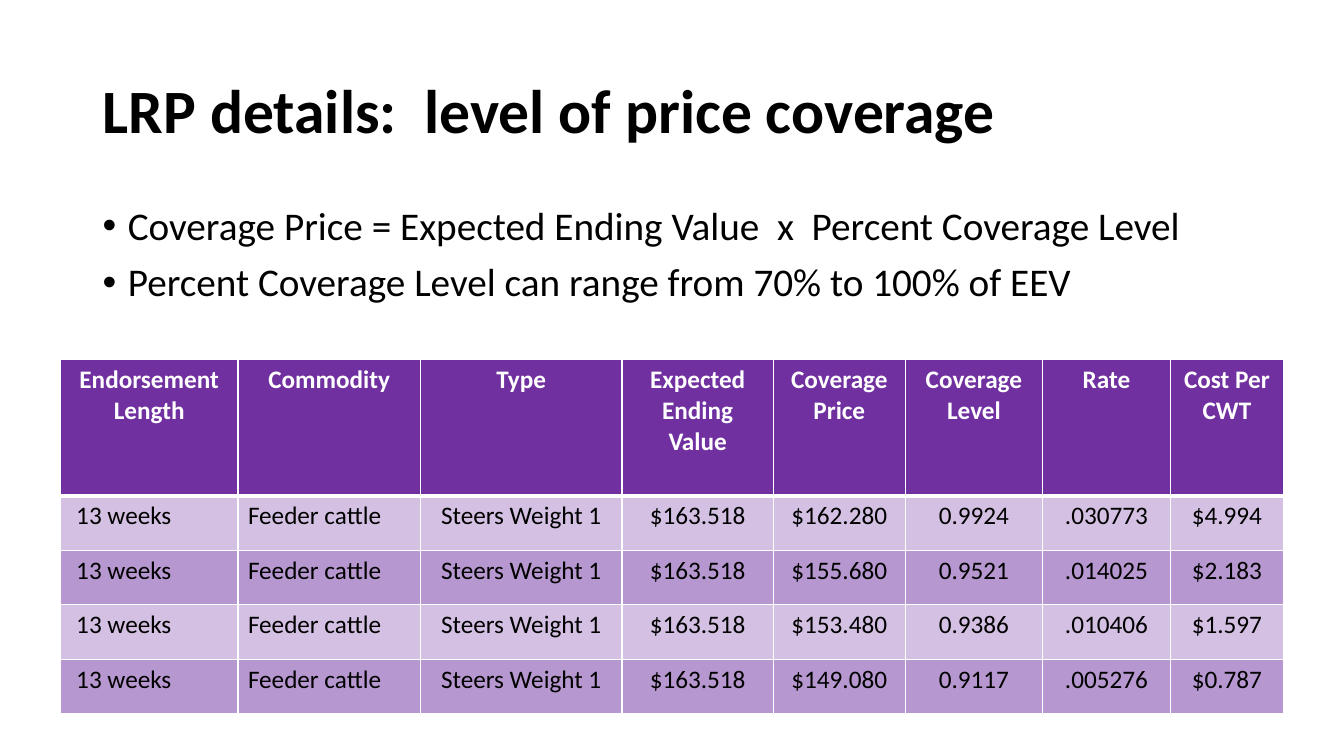
from lxml import etree
from pptx import Presentation
from pptx import util as u
from pptx.dml.color import RGBColor
from pptx.enum import text
from pptx.oxml import ns

FONT = "Calibri"
BLACK = RGBColor(0x00, 0x00, 0x00)
WHITE = RGBColor(0xFF, 0xFF, 0xFF)
PURPLE = RGBColor(0x70, 0x30, 0xA0)
W, H = 13.33, 7.5

BULLETS = [
    "Coverage Price = Expected Ending Value  x  Percent Coverage Level",
    "Percent Coverage Level can range from 70% to 100% of EEV",
]
HEADERS = ["Endorsement Length", "Commodity", "Type", "Expected Ending Value",
           "Coverage Price", "Coverage Level", "Rate", "Cost Per CWT"]
COMMON = [" 13 weeks", "Feeder cattle", "Steers Weight 1", "$163.518"]
QUOTES = [
    ["$162.280", "0.9924", ".030773", "$4.994"],
    ["$155.680", "0.9521", ".014025", "$2.183"],
    ["$153.480", "0.9386", ".010406", "$1.597"],
    ["$149.080", "0.9117", ".005276", "$0.787"],
]
COL_WIDTHS = [1.76, 1.81, 2, 1.5, 1.31, 1.36, 1.27, 1.12]
HEADER_HEIGHT, ROW_HEIGHT = 1.35, 0.54
LEFT_COLS = 2


def child(parent, tag, **attrs):
    return etree.SubElement(parent, ns.qn(tag), attrs)


def write(p, words, size=18, color=BLACK, bold=False, align=text.PP_ALIGN.LEFT,
          spacing=1.0, before=0, bullet=None):
    p.alignment = align
    p.line_spacing = spacing
    p.space_before = u.Pt(before)
    if bullet:
        pPr = p._p.get_or_add_pPr()
        indent = u.Inches(0.25)
        pPr.set("marL", str(indent))
        pPr.set("indent", str(-indent))
        child(pPr, "a:buFont", typeface="Arial")
        child(pPr, "a:buChar", char=bullet)
    r = p.add_run()
    r.text = words
    r.font.name = FONT
    r.font.size = u.Pt(size)
    r.font.bold = bold
    r.font.color.rgb = color


def text_frame(s, box, anchor):
    tf = s.shapes.add_textbox(*map(u.Inches, box)).text_frame
    tf.word_wrap = True
    tf.vertical_anchor = anchor
    return tf


def add_title(s, box):
    tf = text_frame(s, box, text.MSO_ANCHOR.MIDDLE)
    write(tf.paragraphs[0], "LRP details:  level of price coverage",
          size=44, bold=True, spacing=0.9)


def add_bullets(s, box):
    tf = text_frame(s, box, text.MSO_ANCHOR.TOP)
    for i, words in enumerate(BULLETS):
        p = tf.add_paragraph() if i else tf.paragraphs[0]
        write(p, words, size=28, spacing=0.9, before=10, bullet="•")


def style_cell(cell, row):
    tcPr = cell._tc.get_or_add_tcPr()
    widths = {"L": 1, "R": 1, "T": 3 if row == 1 else 1, "B": 3 if row == 0 else 1}
    for side, width in widths.items():
        ln = child(tcPr, f"a:ln{side}", w=str(u.Pt(width)))
        child(child(ln, "a:solidFill"), "a:srgbClr", val=str(WHITE))
    cell.fill.solid()
    cell.fill.fore_color.rgb = PURPLE
    if row:
        clr = tcPr.find(ns.qn("a:solidFill")).find(ns.qn("a:srgbClr"))
        child(clr, "a:alpha", val="30000" if row % 2 else "50000")


def add_price_table(s, box):
    rows = [HEADERS] + [COMMON + quote for quote in QUOTES]
    tbl = s.shapes.add_table(len(rows), len(HEADERS), *map(u.Inches, box)).table
    for col, width in zip(tbl.columns, COL_WIDTHS):
        col.width = u.Inches(width)
    for i, values in enumerate(rows):
        tbl.rows[i].height = u.Inches(ROW_HEIGHT if i else HEADER_HEIGHT)
        for j, value in enumerate(values):
            cell = tbl.cell(i, j)
            style_cell(cell, i)
            left = i > 0 and j < LEFT_COLS
            write(cell.text_frame.paragraphs[0], value, bold=i == 0,
                  color=BLACK if i else WHITE,
                  align=text.PP_ALIGN.LEFT if left else text.PP_ALIGN.CENTER)


def main():
    prs = Presentation()
    prs.slide_width, prs.slide_height = u.Inches(W), u.Inches(H)
    s = prs.slides.add_slide(prs.slide_layouts[6])
    margin = 0.92
    add_title(s, (margin, 0.4, W - 2 * margin, 1.45))
    add_bullets(s, (margin, 2, W - 2 * margin, 1.67))
    add_price_table(s, (0.6, 3.57, sum(COL_WIDTHS),
                        HEADER_HEIGHT + len(QUOTES) * ROW_HEIGHT))
    prs.save("out.pptx")


if __name__ == "__main__":
    main()
